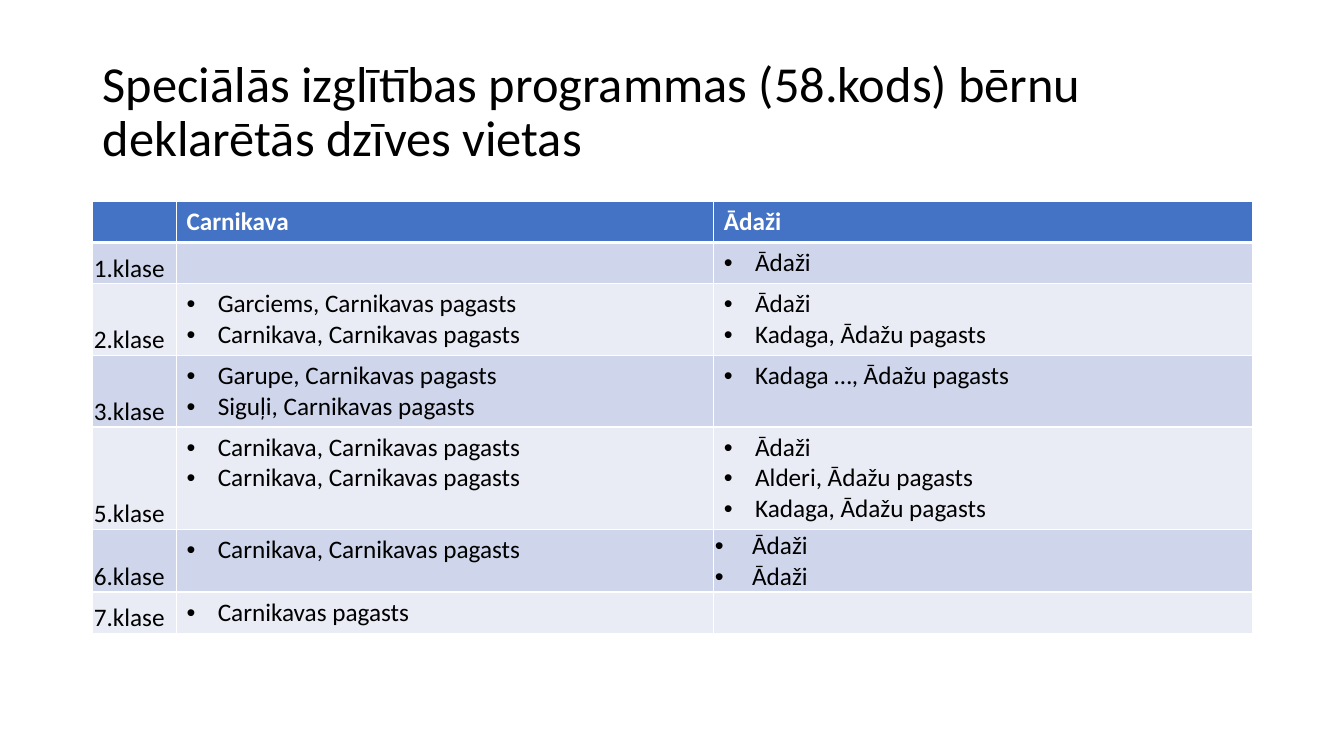
from dataclasses import dataclass

from lxml.etree import SubElement
from pptx import Presentation
from pptx.dml.color import RGBColor as Rgb
from pptx.enum.text import MSO_ANCHOR as Anchor, MSO_AUTO_SIZE as AutoSize, PP_ALIGN as Align
from pptx.oxml.ns import qn
from pptx.table import _Cell as Cell
from pptx.text.text import TextFrame, _Paragraph as Paragraph
from pptx.util import Inches, Pt


@dataclass(frozen=True)
class Theme:
    font: str = "Calibri"
    title_size: float = 36
    table_size: float = 18
    ink: str = "000000"
    paper: str = "FFFFFF"
    header: str = "4472C4"
    bands: tuple[str, str] = ("CFD5EA", "E9EBF5")
    rule: float = 1
    header_rule: float = 3


@dataclass(frozen=True)
class ClassRow:
    name: str
    height: float
    carnikava: tuple[str, ...] = ()
    adazi: tuple[str, ...] = ()
    tight_adazi: bool = False


THEME = Theme()
TITLE = "Speciālās izglītības programmas (58.kods) bērnu deklarētās dzīves vietas"
HEADINGS = ("", "Carnikava", "Ādaži")
COLUMN_WIDTHS = (0.83, 5.33, 5.34)
HEADER_HEIGHT = 0.4
CARNIKAVA = "Carnikava, Carnikavas pagasts"
KADAGA = "Kadaga, Ādažu pagasts"
CLASSES = (
    ClassRow("1.klase", 0.41, adazi=("Ādaži",)),
    ClassRow("2.klase", 0.71, ("Garciems, Carnikavas pagasts", CARNIKAVA), ("Ādaži", KADAGA)),
    ClassRow("3.klase", 0.71, ("Garupe, Carnikavas pagasts", "Siguļi, Carnikavas pagasts"),
             ("Kadaga …, Ādažu pagasts",)),
    ClassRow("5.klase", 1.01, (CARNIKAVA, CARNIKAVA),
             ("Ādaži", "Alderi, Ādažu pagasts", KADAGA)),
    ClassRow("6.klase", 0.62, (CARNIKAVA,), ("Ādaži", "Ādaži"), tight_adazi=True),
    ClassRow("7.klase", 0.41, ("Carnikavas pagasts",)),
)


def add_bullet(paragraph: Paragraph, indent: float) -> None:
    properties = paragraph._p.get_or_add_pPr()
    properties.set("marL", str(Inches(indent)))
    properties.set("indent", str(-Inches(indent)))
    SubElement(properties, qn("a:buFont")).set("typeface", "Arial")
    SubElement(properties, qn("a:buChar")).set("char", "•")


def write(frame: TextFrame, lines: tuple[str, ...], *, size: float = THEME.table_size,
          color: str = THEME.ink, bold: bool = False, bullet_indent: float = 0,
          line_spacing: float = 1.0) -> None:
    for position, line in enumerate(lines):
        paragraph = frame.add_paragraph() if position else frame.paragraphs[0]
        paragraph.alignment = Align.LEFT
        paragraph.line_spacing = line_spacing
        if bullet_indent:
            add_bullet(paragraph, bullet_indent)
        run = paragraph.add_run()
        run.text = line
        run.font.name = THEME.font
        run.font.size = Pt(size)
        run.font.bold = bold
        run.font.color.rgb = Rgb.from_string(color)


def style_cell(cell: Cell, fill: str, *, top: float = THEME.rule,
               bottom: float = THEME.rule) -> None:
    cell.fill.solid()
    cell.fill.fore_color.rgb = Rgb.from_string(fill)
    properties = cell._tc.get_or_add_tcPr()
    edges = {"lnL": THEME.rule, "lnR": THEME.rule, "lnT": top, "lnB": bottom}
    for position, (edge, width) in enumerate(edges.items()):
        border = SubElement(properties, qn(f"a:{edge}"))
        border.set("w", str(Pt(width)))
        SubElement(SubElement(border, qn("a:solidFill")), qn("a:srgbClr")).set("val", THEME.paper)
        properties.insert(position, border)


def tighten(cell: Cell) -> None:
    cell.vertical_anchor = Anchor.BOTTOM
    cell.margin_left = cell.margin_right = cell.margin_top = Inches(0.01)
    cell.margin_bottom = Inches(0)


def add_title(slide) -> None:
    title = slide.shapes.title
    title.left, title.top = Inches(0.92), Inches(0.4)
    title.width, title.height = Inches(11.5), Inches(1.45)
    frame = title.text_frame
    frame.word_wrap = True
    frame.auto_size = AutoSize.NONE
    frame.vertical_anchor = Anchor.MIDDLE
    write(frame, (TITLE,), size=THEME.title_size, line_spacing=0.9)


def add_residence_table(slide) -> None:
    heights = (HEADER_HEIGHT, *(row.height for row in CLASSES))
    table = slide.shapes.add_table(
        len(heights), len(HEADINGS), Inches(0.92), Inches(2),
        Inches(sum(COLUMN_WIDTHS)), Inches(sum(heights))).table
    for column, width in zip(table.columns, COLUMN_WIDTHS):
        column.width = Inches(width)
    for row, height in zip(table.rows, heights):
        row.height = Inches(height)

    for column, heading in enumerate(HEADINGS):
        cell = table.cell(0, column)
        style_cell(cell, THEME.header, bottom=THEME.header_rule)
        if heading:
            write(cell.text_frame, (heading,), color=THEME.paper, bold=True)

    for index, school_class in enumerate(CLASSES):
        name, carnikava, adazi = table.rows[index + 1].cells
        for cell in (name, carnikava, adazi):
            style_cell(cell, THEME.bands[index % 2],
                       top=THEME.rule if index else THEME.header_rule)
        tighten(name)
        write(name.text_frame, (school_class.name,))
        write(carnikava.text_frame, school_class.carnikava, bullet_indent=0.31)
        if school_class.tight_adazi:
            tighten(adazi)
        write(adazi.text_frame, school_class.adazi,
              bullet_indent=0.37 if school_class.tight_adazi else 0.31)


def main() -> None:
    deck = Presentation()
    deck.slide_width, deck.slide_height = Inches(13.33), Inches(7.5)
    slide = deck.slides.add_slide(deck.slide_layouts[5])
    add_title(slide)
    add_residence_table(slide)
    deck.save("out.pptx")


if __name__ == "__main__":
    main()
